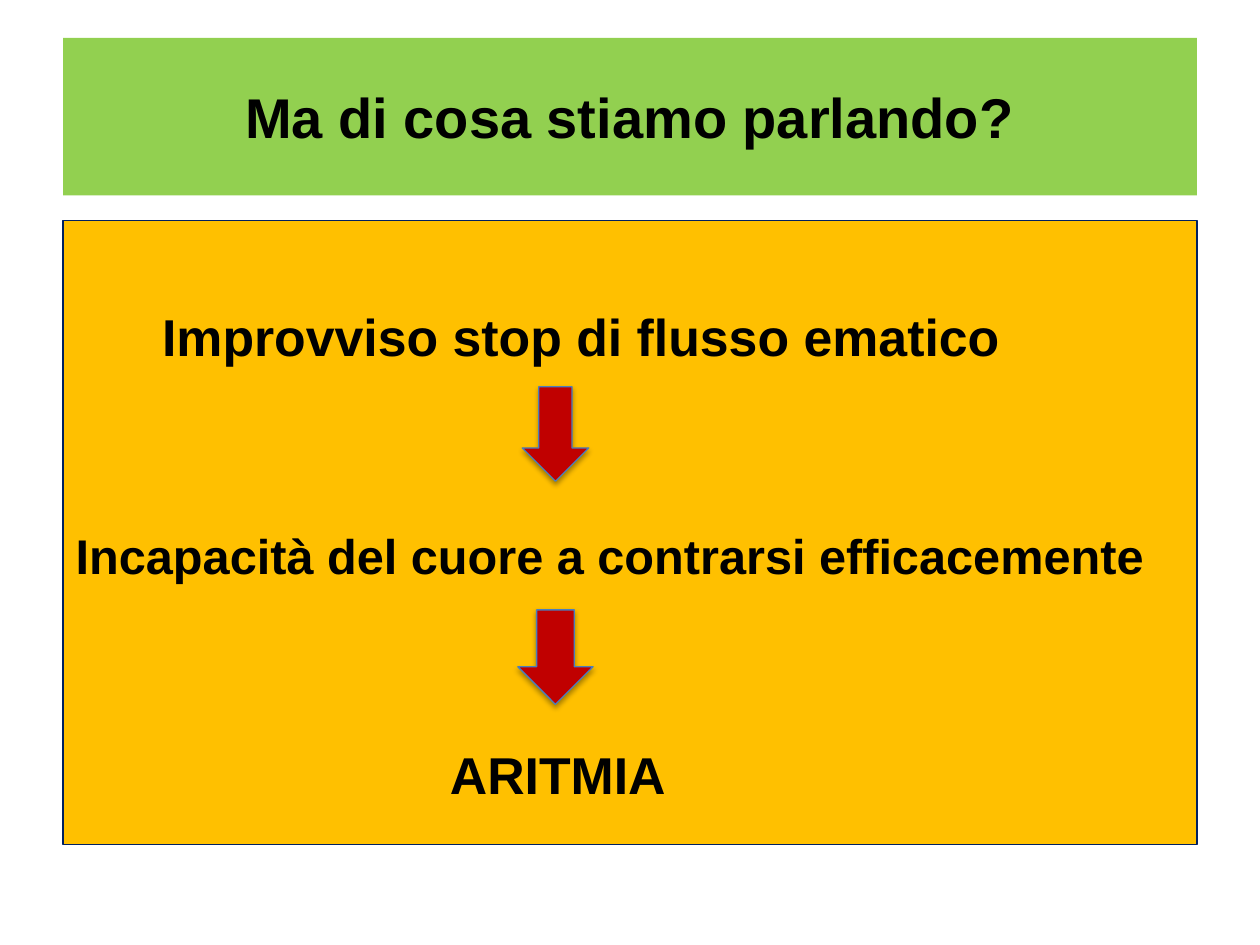
from dataclasses import dataclass

from lxml.etree import SubElement
from pptx import Presentation
from pptx.dml.color import RGBColor
from pptx.enum.shapes import MSO_SHAPE
from pptx.enum.text import MSO_ANCHOR, MSO_AUTO_SIZE, PP_ALIGN
from pptx.oxml.ns import qn
from pptx.util import Pt


@dataclass(frozen=True)
class Theme:
    font: str = "Arial"
    text: str = "000000"
    title_fill: str = "92D050"
    body_fill: str = "FFC000"
    body_line: str = "002060"
    arrow_fill: str = "C00000"
    arrow_line: str = "4B7EBC"
    shadow: str = "000000"
    title_size: float = 32
    step_size: float = 29.6
    long_step_size: float = 27.8
    line_width: float = 0.75


@dataclass(frozen=True)
class Step:
    text: str
    size: float
    indent: float


@dataclass(frozen=True)
class Arrow:
    top: float
    width: float


THEME = Theme()
MARGIN, CONTENT_WIDTH = 36, 648
STEP_GAP = 90.5
ARROW_CENTRE, ARROW_HEIGHT = 317.4, 54
STEPS = (
    Step("Improvviso stop di flusso ematico", THEME.step_size, 49.4),
    Step("Incapacità del cuore a contrarsi efficacemente", THEME.long_step_size, 0),
    Step("ARITMIA", THEME.step_size, 213.9),
)
ARROWS = (Arrow(top=221, width=38), Arrow(top=348.5, width=43))


def place(shape, left: float, top: float, width: float, height: float) -> None:
    shape.left, shape.top = Pt(left), Pt(top)
    shape.width, shape.height = Pt(width), Pt(height)


def paint(shape, fill: str, line: str | None = None) -> None:
    shape.fill.solid()
    shape.fill.fore_color.rgb = RGBColor.from_string(fill)
    if line is None:
        shape.line.fill.background()
    else:
        shape.line.color.rgb = RGBColor.from_string(line)
        shape.line.width = Pt(THEME.line_width)


def write(paragraph, text: str, *, size: float, align=PP_ALIGN.LEFT,
          indent: float = 0, before: float = 0) -> None:
    """Fill a paragraph with bold, unbulleted text."""
    properties = paragraph._p.get_or_add_pPr()
    properties.set("marL", str(Pt(indent)))
    properties.set("indent", "0")
    SubElement(properties, qn("a:buNone"))
    paragraph.alignment = align
    paragraph.space_before = Pt(before)
    run = paragraph.add_run()
    run.text = text
    run.font.name = THEME.font
    run.font.size = Pt(size)
    run.font.bold = True
    run.font.color.rgb = RGBColor.from_string(THEME.text)


def add_soft_shadow(shape) -> None:
    shape.shadow.inherit = False
    effects = shape._element.spPr.find(qn("a:effectLst"))
    shadow = SubElement(effects, qn("a:outerShdw"), blurRad=str(Pt(3.1)),
                        dist=str(Pt(1.8)), dir="5400000", rotWithShape="0")
    color = SubElement(shadow, qn("a:srgbClr"), val=THEME.shadow)
    SubElement(color, qn("a:alpha"), val="35000")


def draw_title(title) -> None:
    place(title, MARGIN, 21.6, CONTENT_WIDTH, 90)
    paint(title, THEME.title_fill)
    frame = title.text_frame
    frame.auto_size = MSO_AUTO_SIZE.NONE
    frame.vertical_anchor = MSO_ANCHOR.MIDDLE
    write(frame.paragraphs[0], "Ma di cosa stiamo parlando?",
          size=THEME.title_size, align=PP_ALIGN.CENTER)


def draw_steps(body, steps: tuple[Step, ...]) -> None:
    place(body, MARGIN, 126, CONTENT_WIDTH, 356.4)
    paint(body, THEME.body_fill, THEME.body_line)
    frame = body.text_frame
    frame.auto_size = MSO_AUTO_SIZE.NONE
    frame.vertical_anchor = MSO_ANCHOR.TOP
    frame.margin_top = Pt(48.3)
    for index, step in enumerate(steps):
        paragraph = frame.add_paragraph() if index else frame.paragraphs[0]
        write(paragraph, step.text, size=step.size, indent=step.indent,
              before=STEP_GAP if index else 0)


def draw_arrow(slide, arrow: Arrow) -> None:
    shape = slide.shapes.add_shape(
        MSO_SHAPE.DOWN_ARROW, Pt(ARROW_CENTRE - arrow.width / 2), Pt(arrow.top),
        Pt(arrow.width), Pt(ARROW_HEIGHT))
    paint(shape, THEME.arrow_fill, THEME.arrow_line)
    add_soft_shadow(shape)


def main() -> None:
    presentation = Presentation()
    presentation.slide_width, presentation.slide_height = Pt(720), Pt(540)
    slide = presentation.slides.add_slide(presentation.slide_layouts[1])
    draw_title(slide.shapes.title)
    draw_steps(slide.placeholders[1], STEPS)
    for arrow in ARROWS:
        draw_arrow(slide, arrow)
    presentation.save("out.pptx")


if __name__ == "__main__":
    main()
